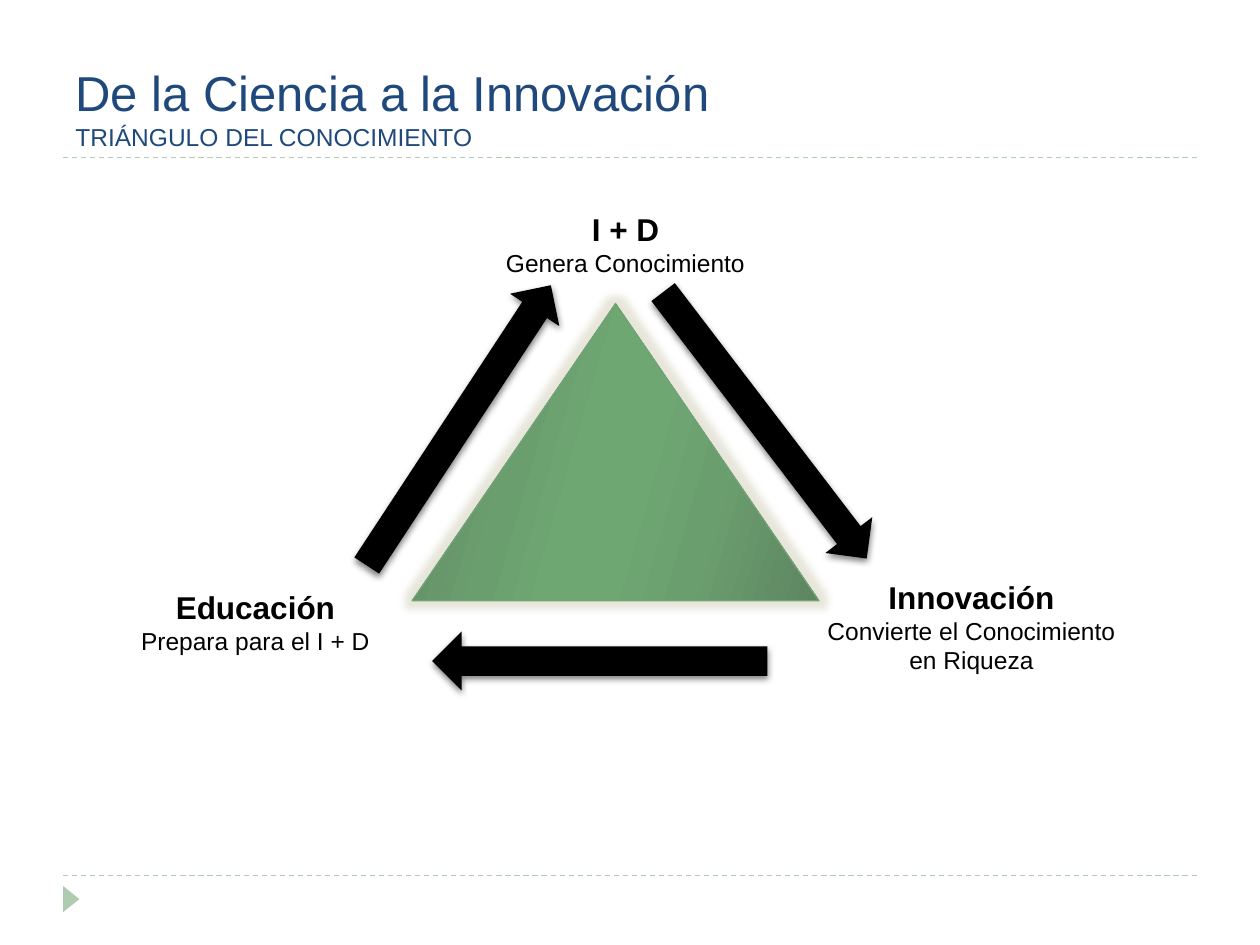
import pptx
import pptx.dml.color
import pptx.enum.dml
import pptx.enum.shapes
import pptx.enum.text
import pptx.oxml
import pptx.oxml.ns
import pptx.util

Cm, Pt = pptx.util.Cm, pptx.util.Pt
SHAPE = pptx.enum.shapes.MSO_SHAPE
ALIGN = pptx.enum.text.PP_ALIGN
ANCHOR = pptx.enum.text.MSO_ANCHOR
qn = pptx.oxml.ns.qn

FONT = "Arial"
NAVY, BLACK, SAGE = "1F497D", "000000", "B0CCB0"
GRADIENT = [(0, "5D8561"), (30, "6B9E6F"), (45, "6EA772"),
            (55, "6EA772"), (73, "6B9E6F"), (100, "5D8561")]
SHADOW = ('<a:outerShdw {} blurRad="50800" dist="25400" dir="5400000" rotWithShape="0">'
          '<a:srgbClr val="000000"><a:alpha val="50000"/></a:srgbClr></a:outerShdw>')
GLOW = ('<a:glow {} rad="101600"><a:srgbClr val="CCC9B0">'
        '<a:alpha val="45000"/></a:srgbClr></a:glow>')


def rgb(value):
    return pptx.dml.color.RGBColor.from_string(value)


def xml(template):
    return pptx.oxml.parse_xml(template.format(pptx.oxml.ns.nsdecls("a")))


def add_run(p, text, size, color, bold=False):
    r = p.add_run()
    r.text = text
    r.font.name, r.font.size, r.font.bold = FONT, Pt(size), bold
    r.font.color.rgb = rgb(color)


def add_preset(slide, kind, left, top, width, height, color=None, rotation=0, effect=None):
    sp = slide.shapes.add_shape(kind, Cm(left), Cm(top), Cm(width), Cm(height))
    sp.rotation = rotation
    sp.line.fill.background()
    if color:
        sp.fill.solid()
        sp.fill.fore_color.rgb = rgb(color)
    sp.shadow.inherit = False
    if effect:
        sp._element.spPr.find(qn("a:effectLst")).append(xml(effect))
    return sp


def add_rule(slide, left, top, width):
    line = slide.shapes.add_connector(pptx.enum.shapes.MSO_CONNECTOR.STRAIGHT,
                                      Cm(left), Cm(top), Cm(left + width), Cm(top))
    line.line.color.rgb = rgb(SAGE)
    line.line.width = Pt(0.75)
    line.line.dash_style = pptx.enum.dml.MSO_LINE.DASH
    line._element.spPr.append(xml("<a:effectLst {}/>"))


def add_title(slide, left, top, width, height):
    tf = slide.shapes.add_textbox(Cm(left), Cm(top), Cm(width), Cm(height)).text_frame
    tf.word_wrap = True
    tf.vertical_anchor = ANCHOR.BOTTOM
    p = tf.paragraphs[0]
    add_run(p, "De la Ciencia a la Innovación", 28, NAVY)
    p.add_line_break()
    add_run(p, "TRIÁNGULO DEL CONOCIMIENTO", 14, NAVY)
    add_rule(slide, left, top + height, 22.86)


def add_footer(slide, left, top, width):
    add_rule(slide, left, top, width)
    add_preset(slide, SHAPE.ISOSCELES_TRIANGLE, left - 0.1, top + 0.31, 0.53, 0.33, SAGE, 90)


def add_label(slide, left, top, width, height, heading, *details):
    tf = slide.shapes.add_textbox(Cm(left), Cm(top), Cm(width), Cm(height)).text_frame
    tf.word_wrap = False
    add_run(tf.paragraphs[0], heading, 18, BLACK, bold=True)
    for detail in details:
        add_run(tf.add_paragraph(), detail, 14, BLACK)
    for p in tf.paragraphs:
        p.alignment = ALIGN.CENTER


def add_core_triangle(slide, left, top, width, height):
    sp = add_preset(slide, SHAPE.ISOSCELES_TRIANGLE, left, top, width, height, effect=GLOW)
    sp.fill.gradient()
    sp.fill.gradient_angle = 360 - 16
    stops = sp._element.spPr.find(qn("a:gradFill")).find(qn("a:gsLst"))
    for stop in list(stops):
        stops.remove(stop)
    for position, color in GRADIENT:
        stops.append(xml(f'<a:gs {{}} pos="{position * 1000}"><a:srgbClr val="{color}"/></a:gs>'))
    sp.line.color.rgb = rgb("72A376")
    sp.line.width = Pt(0.75)


def add_knowledge_cycle(slide, left, top):
    """Triangle with a label at each corner and an arrow along each side."""
    add_core_triangle(slide, left + 5.74, top + 2.01, 8.2, 5.99)
    labels = [
        (7.36, 0, 5.36, 1.63, "I + D", "Genera Conocimiento"),
        (0, 7.62, 5.16, 1.63, "Educación", "Prepara para el I + D"),
        (13.84, 7.42, 6.35, 2.24, "Innovación", "Convierte el Conocimiento", "en Riqueza"),
    ]
    for x, y, width, height, *lines in labels:
        add_label(slide, left + x, top + y, width, height, *lines)
    for x, y, rotation in [(3.3, 3.87, 303.3), (9.47, 3.87, 52.6), (6.14, 8.62, 180)]:
        add_preset(slide, SHAPE.RIGHT_ARROW, left + x, top + y, 6.76, 1.19,
                   BLACK, rotation, SHADOW)


def main():
    prs = pptx.Presentation()
    prs.slide_width, prs.slide_height = Cm(25.4), Cm(19.05)
    slide = prs.slides.add_slide(prs.slide_layouts[6])
    add_footer(slide, 1.27, 17.65, 22.86)
    add_title(slide, 1.27, 0.43, 20.83, 2.74)
    add_knowledge_cycle(slide, 2.57, 4.11)
    prs.save("out.pptx")


if __name__ == "__main__":
    main()
